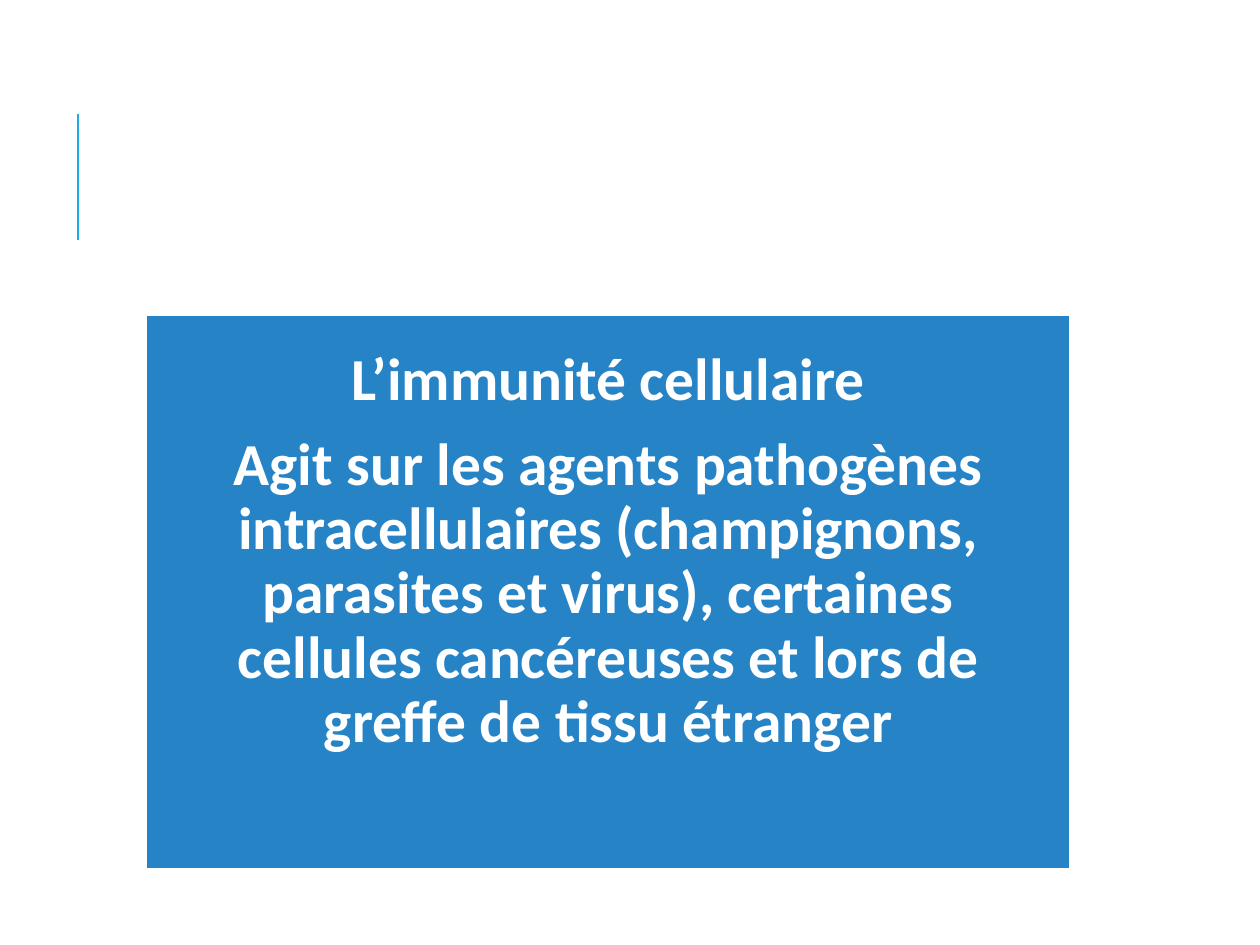
import pptx
import pptx.dml.color
import pptx.enum.shapes
import pptx.enum.text
import pptx.util
from lxml import etree
from pptx.util import Cm, Pt

WHITE = pptx.dml.color.RGBColor(0xFF, 0xFF, 0xFF)
BLUE = pptx.dml.color.RGBColor(0x26, 0x83, 0xC6)
CYAN = pptx.dml.color.RGBColor(0x1C, 0xAD, 0xE4)

STATEMENTS = [
    "L’immunité cellulaire",
    "Agit sur les agents pathogènes intracellulaires (champignons, "
    "parasites et virus), certaines cellules cancéreuses et lors de "
    "greffe de tissu étranger",
]


def add_accent(page):
    accent = page.shapes.add_connector(
        pptx.enum.shapes.MSO_CONNECTOR.STRAIGHT,
        Cm(1.57), Cm(4.83), Cm(1.57), Cm(2.29))
    accent.line.color.rgb = CYAN
    accent.line.width = Pt(1.5)
    etree.SubElement(accent._element.spPr, pptx.oxml.ns.qn("a:effectLst"))


def add_panel(page):
    panel = page.shapes.add_shape(
        pptx.enum.shapes.MSO_SHAPE.RECTANGLE,
        Cm(2.95), Cm(6.35), Cm(18.62), Cm(11.18))
    panel.shadow.inherit = False
    panel.fill.solid()
    panel.fill.fore_color.rgb = BLUE
    panel.line.color.rgb = WHITE
    panel.line.width = Pt(1.25)

    frame = panel.text_frame
    frame.word_wrap = True
    frame.vertical_anchor = pptx.enum.text.MSO_ANCHOR.TOP
    frame.margin_left = frame.margin_right = Cm(0.91)
    frame.margin_top = frame.margin_bottom = Cm(0.68)

    for index, statement in enumerate(STATEMENTS):
        para = frame.add_paragraph() if index else frame.paragraphs[0]
        para.alignment = pptx.enum.text.PP_ALIGN.CENTER
        para.line_spacing = 0.9
        para.space_after = Pt(12)
        span = para.add_run()
        span.text = statement
        span.font.name = "Calibri"
        span.font.size = Pt(34)
        span.font.bold = True
        span.font.color.rgb = WHITE


def main():
    deck = pptx.Presentation()
    deck.slide_width = Cm(25.4)
    deck.slide_height = Cm(19.05)
    page = deck.slides.add_slide(deck.slide_layouts[6])
    add_accent(page)
    add_panel(page)
    deck.save("out.pptx")


if __name__ == "__main__":
    main()
